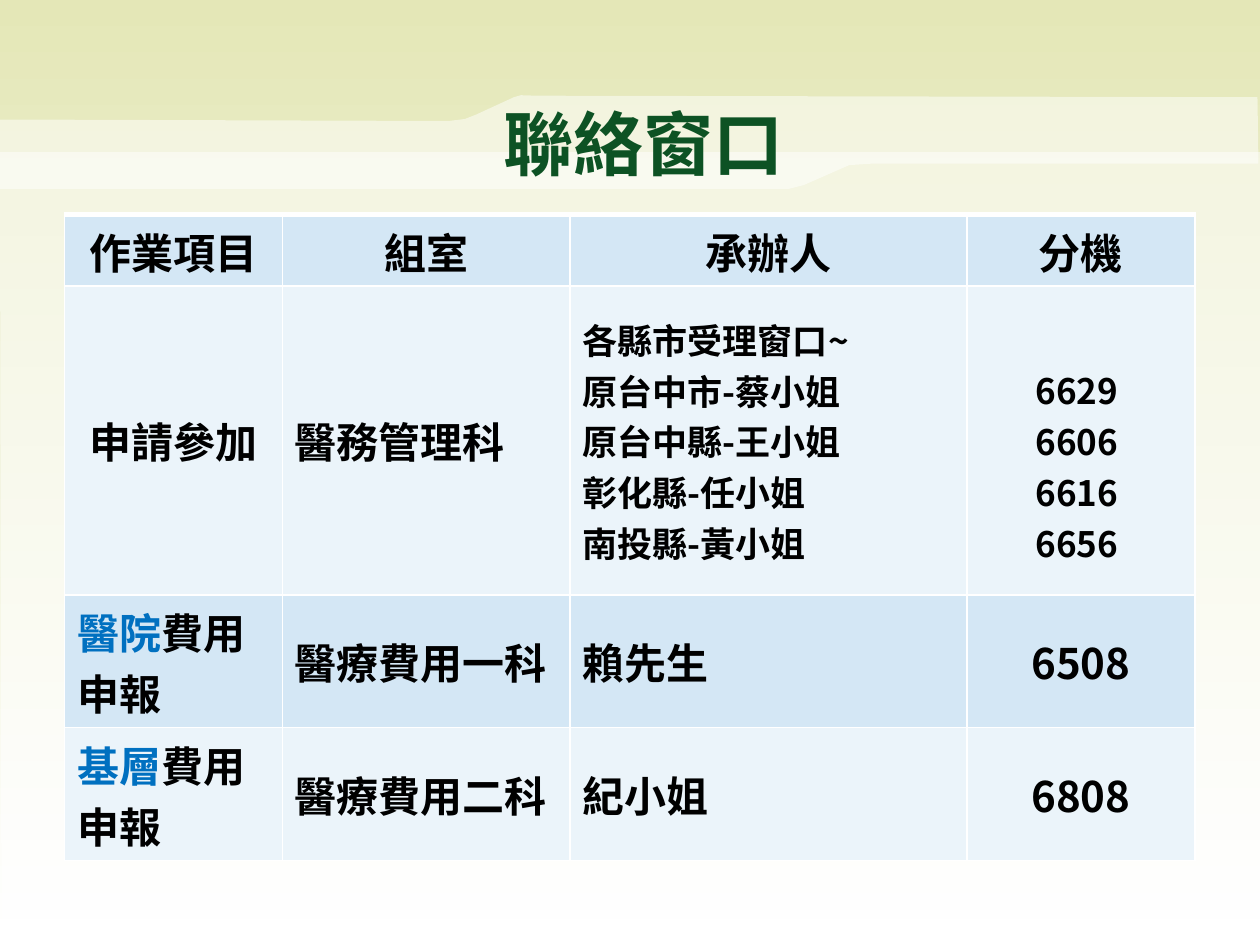
from lxml.etree import SubElement
from pptx import Presentation
from pptx.dml.color import RGBColor
from pptx.enum.text import MSO_ANCHOR, PP_ALIGN
from pptx.oxml.ns import qn
from pptx.util import Cm, Pt

FONT = "Noto Sans CJK SC"
HUES = {
    "top": "E4E7B7", "white": "FFFFFF", "title": "0D5224", "text": "000000",
    "mark": "0070C0", "dark": "D4E7F5", "light": "EBF4FA",
}
TITLE = "聯絡窗口"
HEAD = ["作業項目", "組室", "承辦人", "分機"]
STAFF = ["各縣市受理窗口~", "原台中市-蔡小姐", "原台中縣-王小姐", "彰化縣-任小姐", "南投縣-黃小姐"]
PHONES = ["6629 ", "6606 ", "6616 ", "6656 "]
ROWS = [
    HEAD,
    ["申請參加", "醫務管理科", STAFF, PHONES],
    [("醫院", "費用申報"), "醫療費用一科", "賴先生", "6508"],
    [("基層", "費用申報"), "醫療費用二科", "紀小姐", "6808"],
]
WIDTHS = [4.39, 5.8, 8, 4.6]
HEIGHTS = [1.45, 6.22, 2.68, 2.68]
PANEL = [(0.03, 19.02), (25.48, 19.05), (25.4, 3.07), (0, 3.07)]
BAND = [
    (25.35, 1.96), (10.82, 1.93), (10.5, 1.92), (10.36, 1.96), (9.6, 2.31),
    (9.37, 2.4), (9.04, 2.44), (0, 2.41), (0, 3.81), (15.9, 3.81),
    (16.21, 3.73), (17.12, 3.33), (17.58, 3.3), (25.37, 3.3),
]


def hue(name):
    return RGBColor.from_string(HUES[name])


def write(para, text, size, color):
    run = para.add_run()
    run.text = text
    font = run.font
    font.name, font.size, font.bold = FONT, Pt(size), True
    font.color.rgb = hue(color)
    SubElement(run._r.get_or_add_rPr(), qn("a:ea"), typeface=FONT)


def veil(slide, points):
    dots = [(Cm(x), Cm(y)) for x, y in points]
    pen = slide.shapes.build_freeform(*dots[0])
    pen.add_line_segments(dots[1:])
    shape = pen.convert_to_shape()
    shape.shadow.inherit = False
    shape.fill.solid()
    shape.fill.fore_color.rgb = hue("white")
    shape.line.fill.background()
    tint = shape._element.spPr.find(".//" + qn("a:srgbClr"))
    SubElement(tint, qn("a:alpha"), val="50000")


def border(cell, first):
    props = cell._tc.get_or_add_tcPr()
    for at, side in enumerate(("lnL", "lnR", "lnT", "lnB")):
        points = 3 if first and side == "lnT" else 1
        line = SubElement(props, qn("a:" + side), w=str(Pt(points)))
        fill = SubElement(line, qn("a:solidFill"))
        SubElement(fill, qn("a:srgbClr"), val=HUES["white"])
        props.insert(at, line)


def fill_cell(cell, item, row, col):
    cell.fill.solid()
    cell.fill.fore_color.rgb = hue("light" if row % 2 else "dark")
    border(cell, row == 0)
    cell.vertical_anchor = MSO_ANCHOR.MIDDLE
    if item is PHONES:
        cell.margin_top = Cm(1.15)
    center = row == 0 or col == 3 or (row, col) == (1, 0)
    lines = item if isinstance(item, list) else [item]
    size = 20 if isinstance(item, list) else 24
    frame = cell.text_frame
    for at, line in enumerate(lines):
        para = frame.add_paragraph() if at else frame.paragraphs[0]
        para.alignment = PP_ALIGN.CENTER if center else PP_ALIGN.LEFT
        if isinstance(line, tuple):
            for text, color in zip(line, ("mark", "text")):
                write(para, text, size, color)
        else:
            write(para, line, size, "text")


def main():
    deck = Presentation()
    deck.slide_width, deck.slide_height = Cm(25.4), Cm(19.05)
    slide = deck.slides.add_slide(deck.slide_layouts[6])
    back = slide.background.fill
    back.gradient()
    back.gradient_angle = 270
    for stop, name, place in zip(back.gradient_stops, ("top", "white"), (0, 1)):
        stop.color.rgb = hue(name)
        stop.position = place

    for points in (PANEL, BAND):
        veil(slide, points)

    title = slide.shapes.add_textbox(Cm(9.91), Cm(1.93), Cm(6.3), Cm(1.88))
    title.text_frame.word_wrap = True
    title.text_frame.vertical_anchor = MSO_ANCHOR.MIDDLE
    write(title.text_frame.paragraphs[0], TITLE, 40, "title")

    grid = slide.shapes.add_table(
        len(ROWS), len(HEAD), Cm(1.3), Cm(4.32),
        Cm(sum(WIDTHS)), Cm(sum(HEIGHTS)),
    ).table
    for col, width in zip(grid.columns, WIDTHS):
        col.width = Cm(width)
    for row, height in zip(grid.rows, HEIGHTS):
        row.height = Cm(height)
    for r, items in enumerate(ROWS):
        for c, item in enumerate(items):
            fill_cell(grid.cell(r, c), item, r, c)

    deck.save("out.pptx")


if __name__ == "__main__":
    main()
